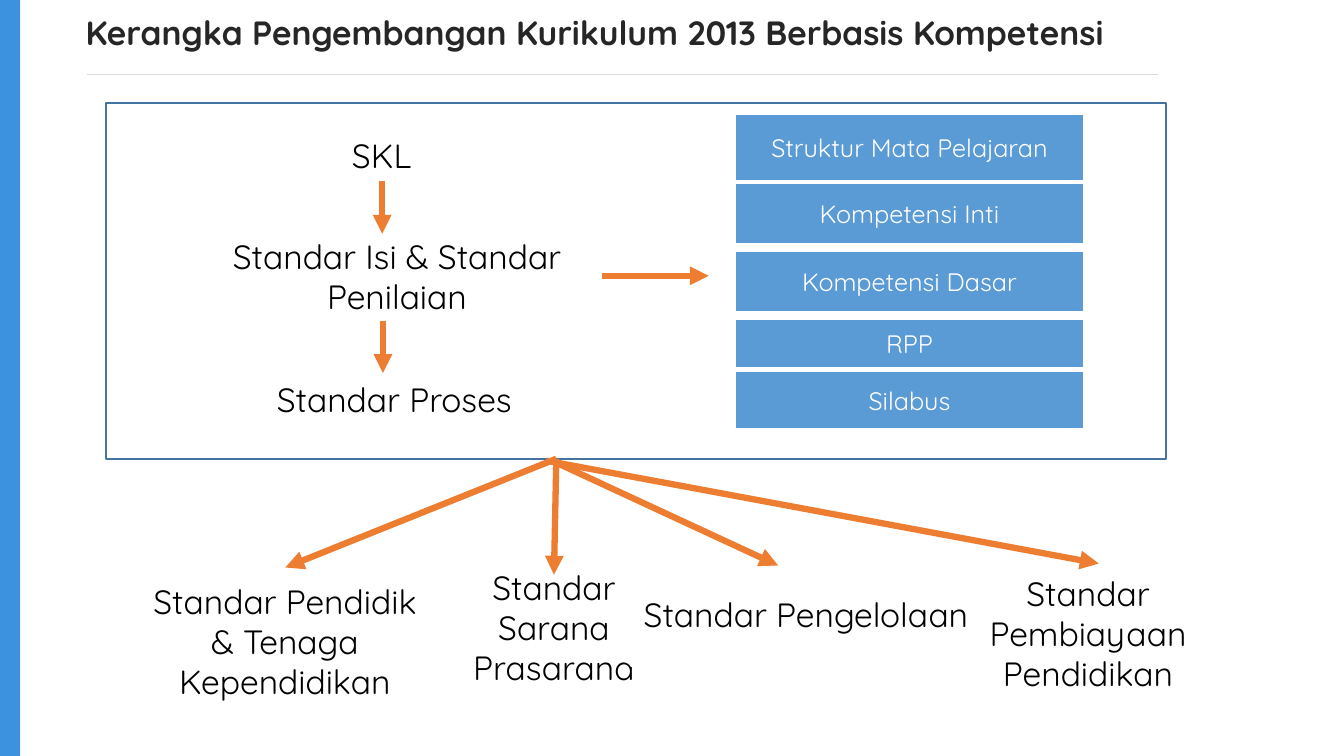
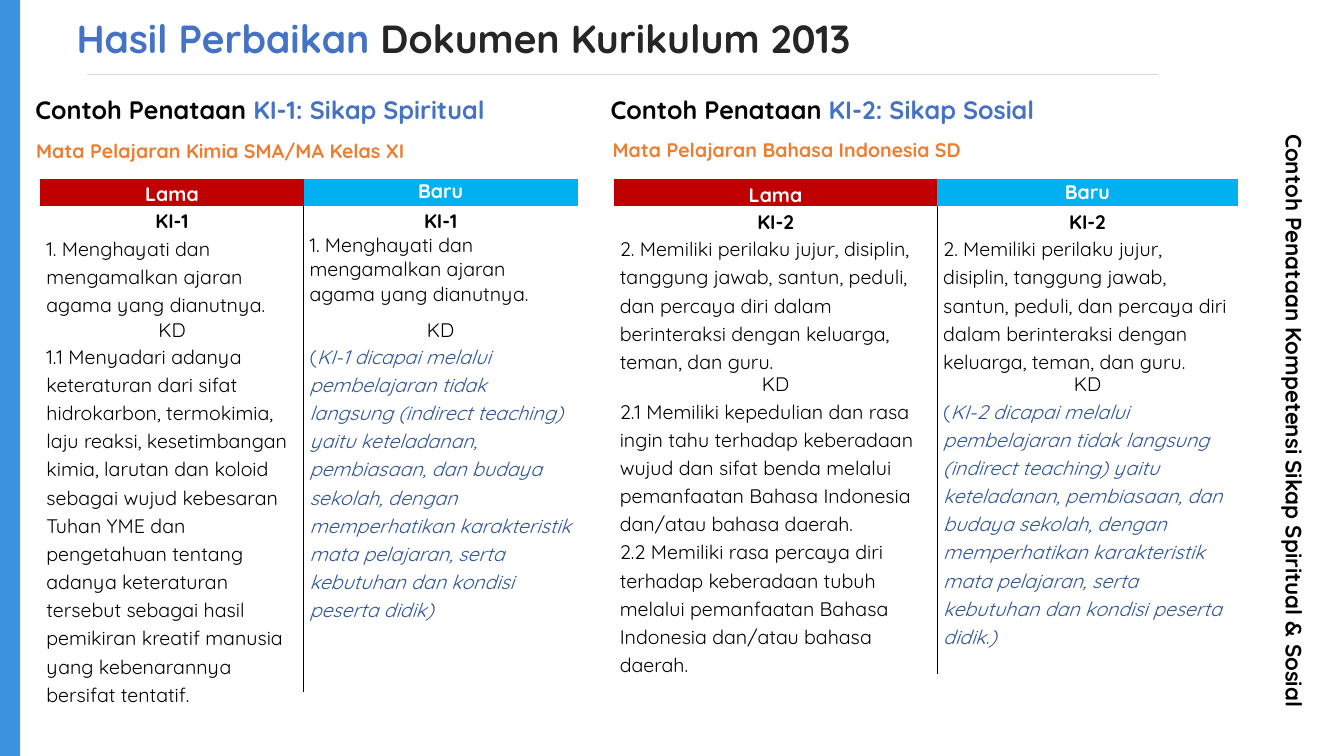
"""Build two slides on the framework and the revised documents of Kurikulum 2013."""
import pptx
import pptx.dml.color
import pptx.enum.shapes
import pptx.enum.text
import pptx.oxml
import pptx.oxml.ns
import pptx.util

Cm = pptx.util.Cm
Pt = pptx.util.Pt
RECT = pptx.enum.shapes.MSO_SHAPE.RECTANGLE
STRAIGHT = pptx.enum.shapes.MSO_CONNECTOR.STRAIGHT
FIT = pptx.enum.text.MSO_AUTO_SIZE.SHAPE_TO_FIT_TEXT
LEFT = pptx.enum.text.PP_ALIGN.LEFT
CENTER = pptx.enum.text.PP_ALIGN.CENTER
NS = pptx.oxml.ns.nsdecls("a")
FONT = "Quicksand"
BLACK, WHITE, INK = "000000", "FFFFFF", "262626"
BLUE, ORANGE, NAVY = "4472C4", "ED7D31", "2F5597"


def rgb(value):
    return pptx.dml.color.RGBColor.from_string(value)


def write(tf, size, bold, align, *parts):
    tf.text = parts[0][0]
    for text, color in parts[1:]:
        tf.paragraphs[-1].add_run().text = text
    for p in tf.paragraphs:
        p.alignment = align
        for r, (text, color) in zip(p.runs, parts):
            r.font.name = FONT
            r.font.size = Pt(size)
            r.font.bold = bold
            r.font.color.rgb = rgb(color)


prs = pptx.Presentation()
prs.slide_width, prs.slide_height = Cm(33.87), Cm(19.05)
layout = prs.slide_layouts[6]
for ph in list(layout.placeholders):
    ph.element.getparent().remove(ph.element)
framework = prs.slides.add_slide(layout)
revision = prs.slides.add_slide(layout)

rule = framework.shapes.add_connector(STRAIGHT, Cm(2.18), Cm(1.88), Cm(29.18), Cm(1.88))
rule.line.color.rgb = rgb("D9D9D9")
rule.line.width = Pt(0.5)
rule.element.spPr.append(pptx.oxml.parse_xml(f"<a:effectLst {NS}/>"))
band = framework.shapes.add_shape(RECT, 0, 0, Cm(0.51), prs.slide_height)
band.shadow.inherit = False
band.fill.solid()
band.fill.fore_color.rgb = rgb("3C92DE")
band.line.fill.background()
for sp in (rule, band):
    layout.element.cSld.spTree.append(sp.element)

titles = [
    (framework, (1.96, 0.2, 28.55, 1.24), 24,
     [("Kerangka Pengembangan Kurikulum 2013 Berbasis Kompetensi", INK)]),
    (revision, (1.73, 0.25, 28.55, 1.42), 28,
     [("Hasil Perbaikan ", BLUE), ("Dokumen Kurikulum 2013", INK)]),
]
for s, place, size, parts in titles:
    tf = s.shapes.add_textbox(*map(Cm, place)).text_frame
    tf.word_wrap = True
    tf.auto_size = FIT
    tf.margin_left = tf.margin_right = Cm(0.2)
    tf.margin_top = tf.margin_bottom = Cm(0.1)
    write(tf, size, True, LEFT, *parts)

standards = [
    ("Standar Pendidik & Tenaga Kependidikan", 3.23, 14.83, 7.9, 2.64),
    ("Standar Sarana Prasarana", 10.72, 14.48, 6.48, 2.64),
    ("Standar Pengelolaan", 15.9, 14.15, 8.82, 2.64),
    ("Standar Pembiayaan Pendidikan", 23.37, 14.63, 8.1, 2.64),
    ("SKL", 5.49, 2.84, 8.26, 2.16),
    ("Standar Isi & Standar Penilaian", 4.85, 5.87, 10.31, 2.16),
    ("Standar Proses", 4.78, 8.97, 10.31, 2.16),
]
documents = [
    ("Struktur Mata Pelajaran", 2.87, 1.7),
    ("Kompetensi Inti", 4.62, 1.52),
    ("Kompetensi Dasar", 6.32, 1.55),
    ("RPP", 8.03, 1.24),
    ("Silabus", 9.35, 1.47),
]
boxes = [(text, place, None, WHITE, 24, BLACK) for text, *place in standards]
boxes += [(text, (18.52, y, 8.8, h), "5B9BD5", WHITE, 18, WHITE) for text, y, h in documents]
boxes.append(("", (2.67, 2.59, 26.72, 8.97), None, "43739E", 24, BLACK))
shapes = {}
for text, place, fill, line, size, color in boxes:
    sp = shapes[text] = framework.shapes.add_shape(RECT, *map(Cm, place))
    sp.shadow.inherit = False
    if fill:
        sp.fill.solid()
        sp.fill.fore_color.rgb = rgb(fill)
    else:
        sp.fill.background()
    sp.line.color.rgb = rgb(line)
    sp.line.width = Pt(1.5)
    if text:
        write(sp.text_frame, size, False, CENTER, (text, color))

arrows = [
    (9.63, 4.57, 9.63, 5.89),
    (9.65, 8.08, 9.65, 9.4),
    (15.16, 6.95, 17.86, 6.95),
    (14.02, 11.56, 7.19, 14.3),
    (14.02, 11.66, 19.61, 14.25),
    (14.02, 11.56, 13.96, 14.48),
    (13.77, 11.61, 27.69, 14.2),
]
connectors = []
for ends in arrows:
    c = framework.shapes.add_connector(STRAIGHT, *map(Cm, ends))
    c.line.color.rgb = rgb(ORANGE)
    c.line.width = Pt(4.5)
    c.line._get_or_add_ln().append(pptx.oxml.parse_xml(f'<a:tailEnd {NS} type="triangle"/>'))
    c.element.spPr.append(pptx.oxml.parse_xml(f"<a:effectLst {NS}/>"))
    connectors.append(c)
connectors[2].begin_connect(shapes["Standar Isi & Standar Penilaian"], 3)
connectors[5].end_connect(shapes["Standar Sarana Prasarana"], 0)

captions = [
    ((0.64, 2.26, 11.99, 1.02), 18, False, 0,
     [("Contoh Penataan ", BLACK), ("KI-1: Sikap Spiritual", BLUE)]),
    ((0.66, 3.38, 10.85, 0.86), 14, True, 0,
     [("Mata Pelajaran Kimia SMA/MA Kelas XI", ORANGE)]),
    ((15.14, 2.26, 11.3, 1.02), 18, False, 0,
     [("Contoh Penataan ", BLACK), ("KI-2: Sikap Sosial", BLUE)]),
    ((15.19, 3.35, 9.91, 0.86), 14, True, 0,
     [("Mata Pelajaran Bahasa Indonesia SD", ORANGE)]),
    ((25.07, 10.21, 15.09, 0.94), 16, False, 90,
     [("Contoh Penataan Kompetensi Sikap Spiritual & Sosial", BLACK)]),
]
for place, size, wrap, rotation, parts in captions:
    sp = revision.shapes.add_textbox(*map(Cm, place))
    sp.rotation = rotation
    tf = sp.text_frame
    tf.word_wrap = wrap
    tf.auto_size = FIT
    write(tf, size, True, LEFT, *parts)

tables = [
    ("KI-1", (1.02, 4.5), (6.63, 6.91), (0.58, 0.58, 1.78, 0.58, 7.75), 1.0,
     "1. Menghayati dan mengamalkan ajaran agama yang dianutnya.",
     "1.1 Menyadari adanya keteraturan dari sifat hidrokarbon, termokimia, laju reaksi, "
     "kesetimbangan kimia, larutan dan koloid sebagai wujud kebesaran Tuhan YME dan "
     "pengetahuan tentang adanya keteraturan tersebut sebagai hasil pemikiran kreatif "
     "manusia yang kebenarannya bersifat tentatif.",
     "didik)"),
    ("KI-2", (15.47, 4.52), (8.15, 7.57), (0.66, 0.66, 2.64, 0.66, 7.01), 1.15,
     "2. Memiliki perilaku jujur, disiplin, tanggung jawab, santun, peduli, dan percaya diri "
     "dalam berinteraksi dengan keluarga, teman, dan guru.",
     "2.1 Memiliki kepedulian dan rasa ingin tahu terhadap keberadaan wujud dan sifat benda "
     "melalui pemanfaatan Bahasa Indonesia dan/atau bahasa daerah.\n"
     "2.2 Memiliki rasa percaya diri terhadap keberadaan tubuh melalui pemanfaatan Bahasa "
     "Indonesia dan/atau bahasa daerah.",
     "didik.)"),
]
for ki, corner, widths, heights, new_spacing, statement, old_detail, ending in tables:
    new_detail = (
        f"{ki} dicapai melalui pembelajaran tidak langsung (indirect teaching) yaitu "
        "keteladanan, pembiasaan, dan budaya sekolah, dengan memperhatikan karakteristik "
        f"mata pelajaran, serta kebutuhan dan kondisi peserta {ending}")
    rows = [("Lama", "Baru"), (ki, ki), (statement, statement), ("KD", "KD"), (old_detail, "(")]
    gf = revision.shapes.add_table(5, 2, *map(Cm, (*corner, sum(widths), 13.64)))
    gf.element.xpath(".//a:tableStyleId")[0].text = "{2D5ABB26-0587-4C30-8999-92F81FD0307C}"
    table = gf.table
    table.first_row = table.horz_banding = False
    for column, width in zip(table.columns, widths):
        column.width = Cm(width)
    for i, texts in enumerate(rows):
        table.rows[i].height = Cm(heights[i])
        for j, text in enumerate(texts):
            cell = table.cell(i, j)
            cell.margin_left = cell.margin_right = Cm(0.15)
            cell.margin_top = cell.margin_bottom = 0
            if i == 0:
                cell.fill.solid()
                cell.fill.fore_color.rgb = rgb(("C00000", "00B0F0")[j])
            else:
                side = ("lnR", "lnL")[j]
                cell._tc.get_or_add_tcPr().append(pptx.oxml.parse_xml(
                    f'<a:{side} {NS} w="12700"><a:solidFill><a:srgbClr val="{BLACK}"/>'
                    f"</a:solidFill></a:{side}>"))
                cell.fill.background()
            parts = [(text, WHITE if i == 0 else BLACK)]
            if text == "(":
                parts = [(text, NAVY), (new_detail, NAVY)]
            tf = cell.text_frame
            write(tf, 14, i < 2, LEFT if i in (2, 4) else CENTER, *parts)
            for p in tf.paragraphs:
                p.line_spacing = {(0, 1): 1.0, (2, 1): new_spacing}.get((i, j), 1.15)
                for r in p.runs[1:]:
                    r.font.italic = True

prs.save("out.pptx")
